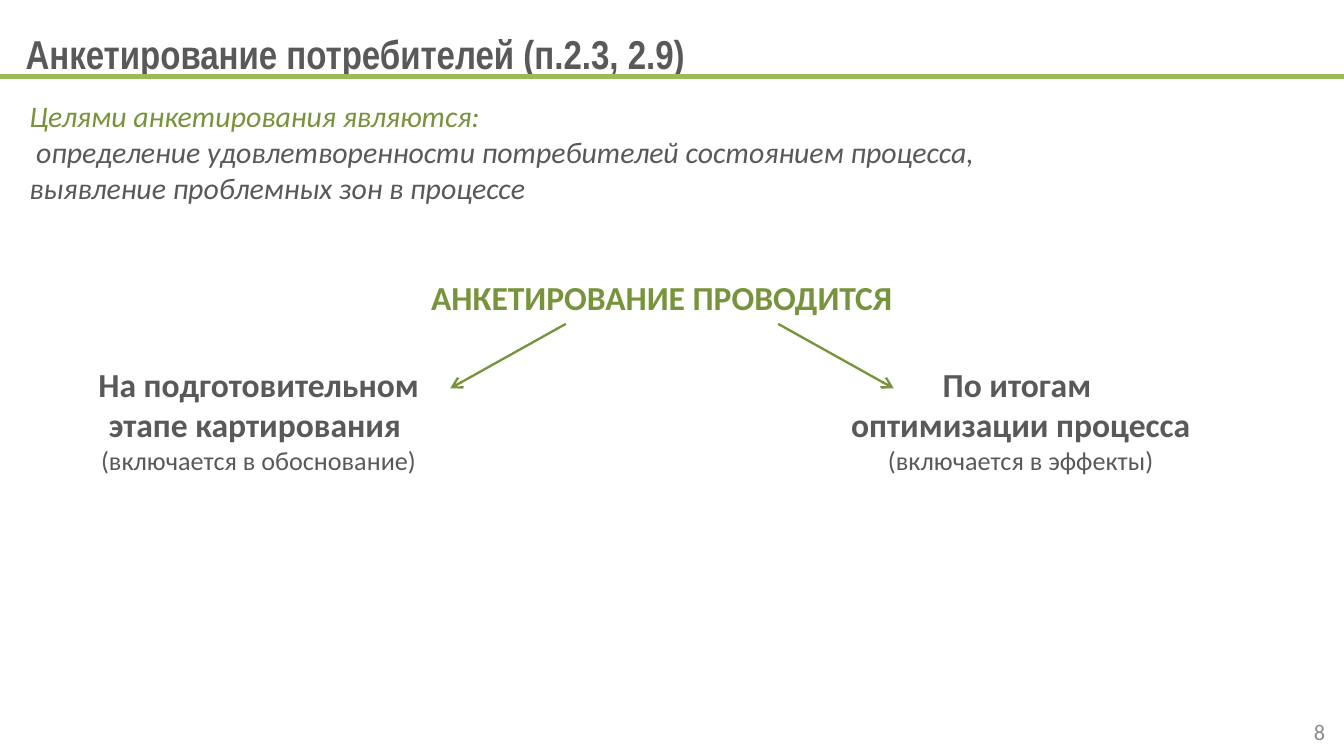
import pptx
import pptx.dml.color
import pptx.enum.shapes
import pptx.enum.text
import pptx.oxml
import pptx.oxml.ns
import pptx.util

GRAY = pptx.dml.color.RGBColor(0x59, 0x59, 0x59)
LIGHT_GRAY = pptx.dml.color.RGBColor(0x8C, 0x8C, 0x8C)
GREEN = pptx.dml.color.RGBColor(0x77, 0x93, 0x3C)
LIGHT_GREEN = pptx.dml.color.RGBColor(0x9B, 0xBB, 0x59)

LEFT = pptx.enum.text.PP_ALIGN.LEFT
CENTER = pptx.enum.text.PP_ALIGN.CENTER
RIGHT = pptx.enum.text.PP_ALIGN.RIGHT
MIDDLE = pptx.enum.text.MSO_ANCHOR.MIDDLE
TOP = pptx.enum.text.MSO_ANCHOR.TOP

presentation = pptx.Presentation()
presentation.slide_width = pptx.util.Inches(10)
presentation.slide_height = presentation.slide_width * 9 // 16
slide = presentation.slides.add_slide(presentation.slide_layouts[5])


def write(shape, box, lines, align=LEFT, anchor=TOP, font="Calibri"):
    """Place the shape and fill it with (text, size, color, bold, italic) paragraphs."""
    shape.left, shape.top, shape.width, shape.height = map(pptx.util.Inches, box)
    frame = shape.text_frame
    frame.word_wrap = True
    frame.auto_size = pptx.enum.text.MSO_AUTO_SIZE.NONE
    frame.vertical_anchor = anchor
    for index, (text, size, color, bold, italic) in enumerate(lines):
        paragraph = frame.add_paragraph() if index else frame.paragraphs[0]
        paragraph.text = text
        paragraph.alignment = align
        paragraph.font.name = font
        paragraph.font.size = pptx.util.Pt(size)
        paragraph.font.color.rgb = color
        paragraph.font.bold = bold
        paragraph.font.italic = italic


def draw_line(start, end, color, width, arrow=False):
    line = slide.shapes.add_connector(
        pptx.enum.shapes.MSO_CONNECTOR.STRAIGHT,
        *map(pptx.util.Inches, (*start, *end)))
    line.line.color.rgb = color
    line.line.width = pptx.util.Pt(width)
    if arrow:
        outline = line.line._get_or_add_ln()
        outline.append(pptx.oxml.parse_xml(
            f'<a:tailEnd {pptx.oxml.ns.nsdecls("a")} type="arrow"/>'))
    properties = line._element.spPr
    properties.append(pptx.oxml.parse_xml(
        f'<a:effectLst {pptx.oxml.ns.nsdecls("a")}/>'))


# Header
write(slide.shapes.title, (0.09, 0.17, 9, 0.46),
      [("Анкетирование потребителей (п.2.3, 2.9)", 21.6, GRAY, True, False)],
      anchor=MIDDLE, font="Arial Narrow")
draw_line((0, 0.57), (10, 0.57), LIGHT_GREEN, 3)

# Goals, survey heading, the two survey stages and the slide number
text_blocks = [
    ((0.12, 0.68, 9.92, 0.91), LEFT, TOP, [
        ("Целями анкетирования являются:", 16, GREEN, False, True),
        (" определение удовлетворенности потребителей состоянием процесса, \v"
         "выявление проблемных зон в процессе", 16, GRAY, False, True)]),
    ((3.11, 2.01, 3.86, 0.4), LEFT, TOP, [
        ("АНКЕТИРОВАНИЕ ПРОВОДИТСЯ", 18, GREEN, True, False)]),
    ((0.35, 2.66, 3.15, 0.94), CENTER, TOP, [
        ("На подготовительном этапе картирования ", 18, GRAY, True, False),
        ("(включается в обоснование)", 14, GRAY, False, False)]),
    ((6.1, 2.66, 2.99, 0.94), CENTER, TOP, [
        ("По итогам \vоптимизации процесса", 18, GRAY, True, False),
        ("(включается в эффекты)", 14, GRAY, False, False)]),
    ((7.63, 5.29, 2.33, 0.3), RIGHT, MIDDLE, [
        ("8", 12, LIGHT_GRAY, False, False)]),
]
for box, align, anchor, lines in text_blocks:
    write(slide.shapes.add_textbox(0, 0, 0, 0), box, lines, align, anchor)

# Arrows mirrored about the middle of the slide
for side in (-1, 1):
    draw_line((5 + side * 0.79, 2.41), (5 + side * 1.65, 2.89), GREEN, 1.25, arrow=True)

presentation.save("out.pptx")
